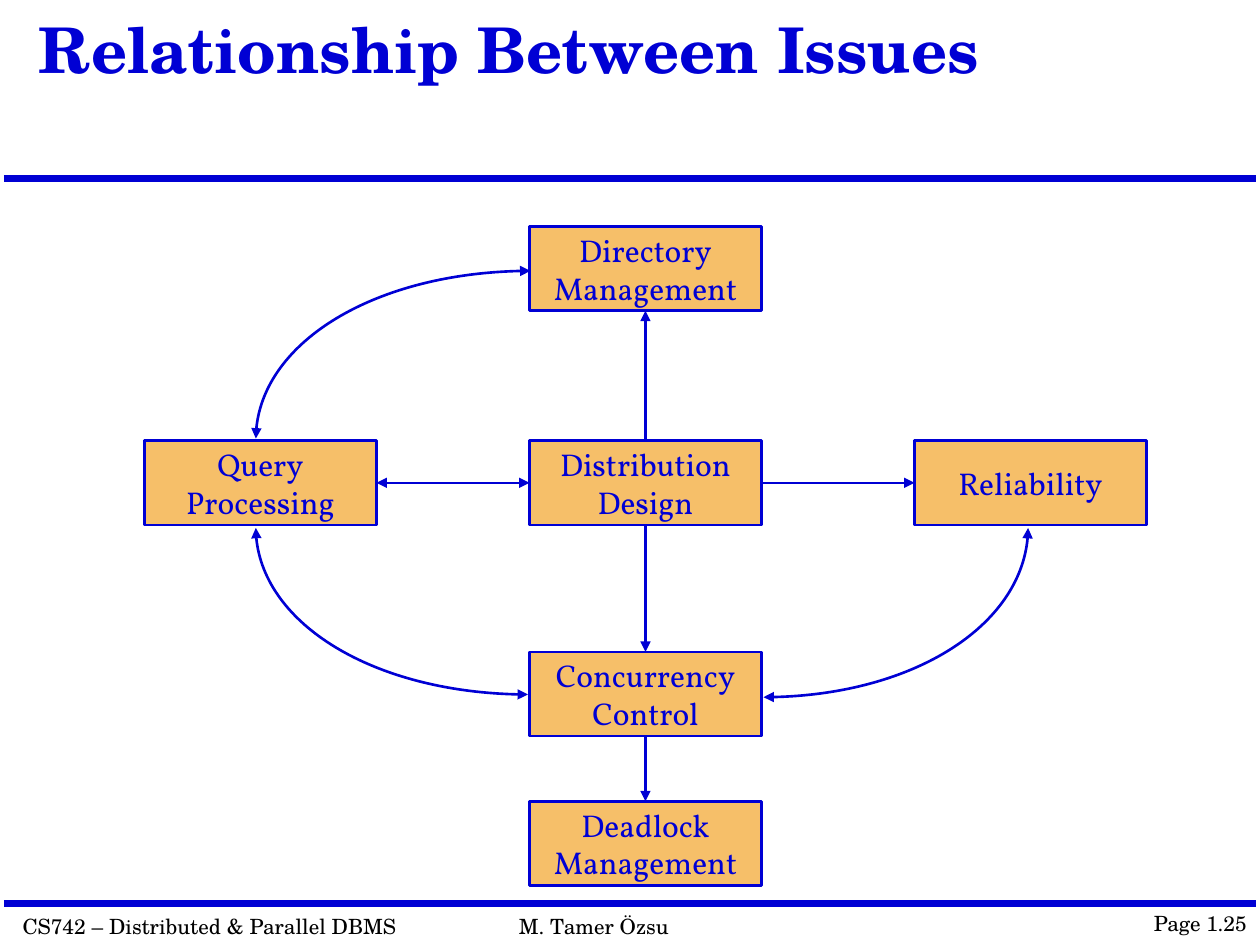
from pptx import Presentation
from pptx.dml.color import RGBColor
from pptx.enum.shapes import MSO_CONNECTOR, MSO_SHAPE
from pptx.enum.text import MSO_ANCHOR, MSO_AUTO_SIZE, PP_ALIGN
from pptx.oxml.ns import qn
from pptx.oxml.xmlchemy import OxmlElement
from pptx.util import Pt

STRAIGHT, RECTANGLE = MSO_CONNECTOR.STRAIGHT, MSO_SHAPE.RECTANGLE
LEFT, CENTER = PP_ALIGN.LEFT, PP_ALIGN.CENTER
MIDDLE, TOP = MSO_ANCHOR.MIDDLE, MSO_ANCHOR.TOP
FIT, FIXED = MSO_AUTO_SIZE.SHAPE_TO_FIT_TEXT, MSO_AUTO_SIZE.NONE
TOP_SIDE, LEFT_SIDE, BOTTOM_SIDE, RIGHT_SIDE = range(4)

THEME = {
    "blue": RGBColor(0x00, 0x00, 0xD4),
    "orange": RGBColor(0xF6, 0xBF, 0x69),
    "black": RGBColor(0x00, 0x00, 0x00),
    "serif": "TeX Gyre Schola",
    "box_font": "Vollkorn",
    "title_size": 36, "box_size": 18, "footer_size": 12,
    "rule_width": 4, "line_width": 1.5,
}

# Content: text, left, top, width, height
TITLE = ("Relationship Between Issues", 15.1, 8.6, 557.3, 46.1)
FOOTERS = [
    ("CS742 – Distributed & Parallel DBMS", 5.8, 518.4, 230.4, 21.6),
    ("M. Tamer Özsu", 289.4, 518.4, 100, 21.6),
    ("Page 1.25", 652.3, 517, 67.7, 21.6),
]
RULE_TOPS = [102.2, 516.2]

# Issue: text lines, column, row
ISSUES = {
    "directory": (["Directory", "Management"], 1, 0),
    "query": (["Query", "Processing"], 0, 1),
    "distribution": (["Distribution", "Design"], 1, 1),
    "reliability": (["Reliability"], 2, 1),
    "concurrency": (["Concurrency", "Control"], 1, 2),
    "deadlock": (["Deadlock", "Management"], 1, 3),
}
# Straight links: from, side, to, side, arrow ends
LINKS = [
    ("distribution", TOP_SIDE, "directory", BOTTOM_SIDE, ["tailEnd"]),
    ("distribution", BOTTOM_SIDE, "concurrency", TOP_SIDE, ["tailEnd"]),
    ("concurrency", BOTTOM_SIDE, "deadlock", TOP_SIDE, ["tailEnd"]),
    ("distribution", RIGHT_SIDE, "reliability", LEFT_SIDE, ["tailEnd"]),
    ("query", RIGHT_SIDE, "distribution", LEFT_SIDE, ["headEnd", "tailEnd"]),
]
# Quarter-ellipse links: upright end, level end
CURVES = [
    ((146.2, 250.6), (303.1, 154.8)),
    ((146.2, 301.7), (301.7, 396.9)),
    ((587.5, 301.7), (436.3, 398.4)),
]

# Layout
SLIDE_W, SLIDE_H = 720, 540
BOX_W, BOX_H = 132.5, 48.2
FIRST_LEFT, COLUMN_STEP = 82.6, 220
ROW_TOPS = [129.4, 251.8, 372.5, 457.9]
RULE_INSET = 2.2
ARC_RATIO = 0.55


def write(shape, lines, font_format, frame_format, paragraph_format):
    frame = shape.text_frame
    for name, value in frame_format.items():
        setattr(frame, name, value)
    for i, line in enumerate(lines):
        paragraph = frame.add_paragraph() if i else frame.paragraphs[0]
        for name, value in paragraph_format.items():
            setattr(paragraph, name, value)
        run = paragraph.add_run()
        run.text = line
        for name, value in font_format.items():
            target = run.font.color if name == "rgb" else run.font
            setattr(target, name, value)


def add_label(slide, label, size, color, bold=False, spacing=1.0):
    text, *place = label
    box = slide.shapes.add_textbox(*map(Pt, place))
    write(box, [text],
          {"name": THEME["serif"], "size": Pt(size), "bold": bold, "rgb": color},
          {"word_wrap": False, "auto_size": FIT, "vertical_anchor": TOP},
          {"alignment": LEFT, "line_spacing": spacing})


def draw_line(shape, width, ends=()):
    shape.line.color.rgb = THEME["blue"]
    shape.line.width = Pt(width)
    outline = shape._element.spPr.find(qn("a:ln"))
    for end in ends:
        arrow = OxmlElement("a:" + end)
        for name, value in {"type": "triangle", "w": "med", "len": "med"}.items():
            arrow.set(name, value)
        outline.append(arrow)


def add_straight(slide, start, finish, width, ends=()):
    line = slide.shapes.add_connector(STRAIGHT, *map(Pt, start + finish))
    draw_line(line, width, ends)
    line._element.spPr.append(OxmlElement("a:effectLst"))
    return line


def add_issue(slide, lines, column, row):
    box = slide.shapes.add_shape(
        RECTANGLE, Pt(FIRST_LEFT + column * COLUMN_STEP), Pt(ROW_TOPS[row]),
        Pt(BOX_W), Pt(BOX_H))
    box.shadow.inherit = False
    box.fill.solid()
    box.fill.fore_color.rgb = THEME["orange"]
    draw_line(box, THEME["line_width"])
    write(box, lines,
          {"name": THEME["box_font"], "size": Pt(THEME["box_size"]),
           "rgb": THEME["blue"]},
          {"word_wrap": False, "auto_size": FIXED, "vertical_anchor": MIDDLE},
          {"alignment": CENTER})
    return box


def add_curve(slide, upright, level):
    (x0, y0), (x1, y1) = upright, level
    controls = [(x0, y0 + ARC_RATIO * (y1 - y0)), (x1 - ARC_RATIO * (x1 - x0), y1)]
    builder = slide.shapes.build_freeform(Pt(x0), Pt(y0))
    builder.add_line_segments(
        [(Pt(x), Pt(y)) for x, y in controls + [level]], close=False)
    curve = builder.convert_to_shape()
    curve.shadow.inherit = False
    curve.fill.background()
    draw_line(curve, THEME["line_width"], ["headEnd", "tailEnd"])
    # Turn the three segments into one Bézier
    segments = list(curve._element.iter(qn("a:lnTo")))
    bezier = OxmlElement("a:cubicBezTo")
    segments[0].addprevious(bezier)
    for segment in segments:
        bezier.append(segment[0])
        segment.getparent().remove(segment)


def main():
    prs = Presentation()
    prs.slide_width, prs.slide_height = Pt(SLIDE_W), Pt(SLIDE_H)
    slide = prs.slides.add_slide(prs.slide_layouts[6])

    # Rules, footer and title
    for top in RULE_TOPS:
        add_straight(slide, (RULE_INSET, top), (SLIDE_W - RULE_INSET, top),
                     THEME["rule_width"])
    for footer in FOOTERS:
        add_label(slide, footer, THEME["footer_size"], THEME["black"])
    add_label(slide, TITLE, THEME["title_size"], THEME["blue"],
              bold=True, spacing=0.87)

    # Issues and the links between them
    boxes = {key: add_issue(slide, *issue) for key, issue in ISSUES.items()}
    for source, source_side, target, target_side, ends in LINKS:
        link = add_straight(slide, (0, 0), (0, 0), THEME["line_width"], ends)
        link.begin_connect(boxes[source], source_side)
        link.end_connect(boxes[target], target_side)
    for upright, level in CURVES:
        add_curve(slide, upright, level)

    prs.save("out.pptx")


if __name__ == "__main__":
    main()
